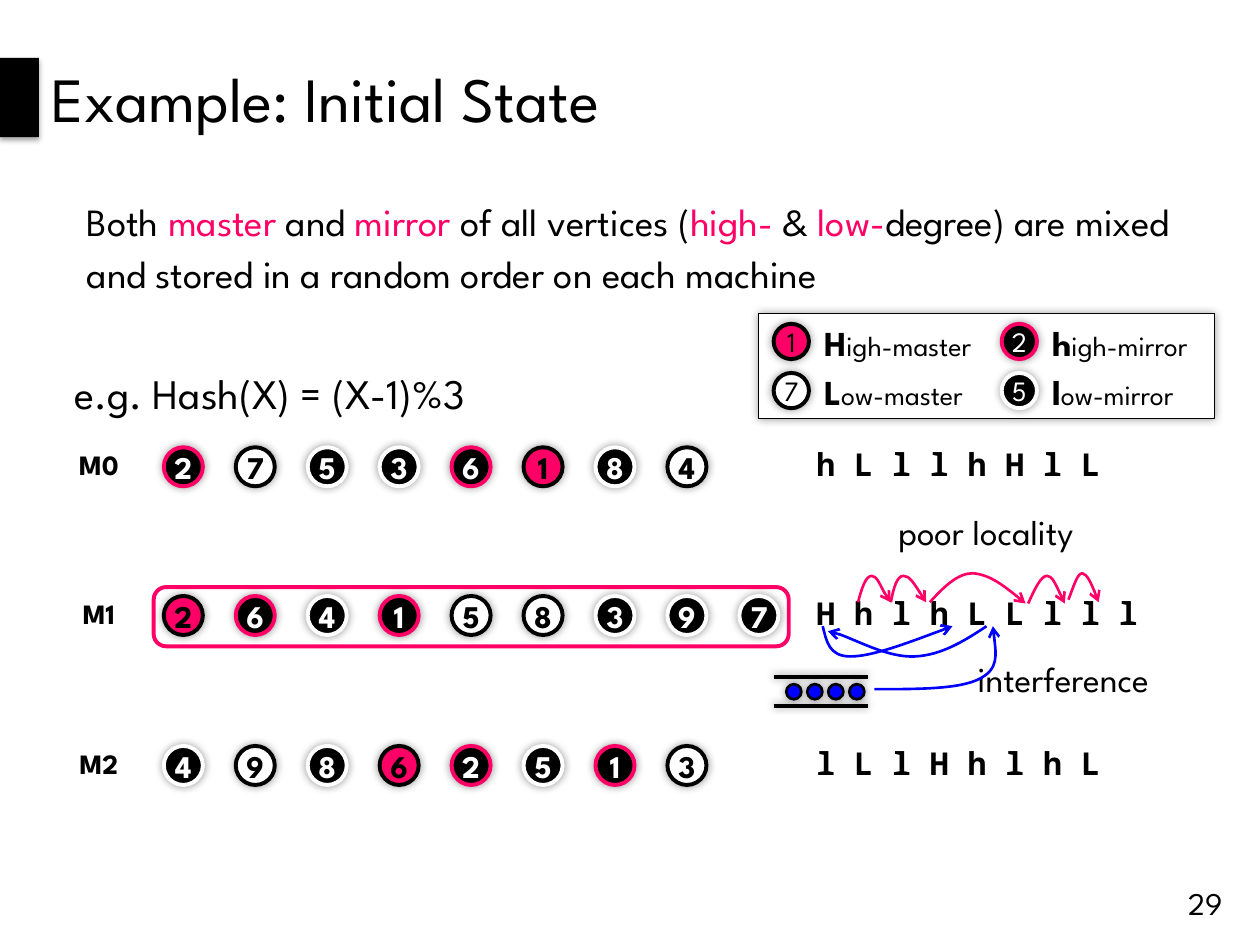
"""Build the slide showing the initial vertex order on three machines."""
from lxml import etree
from pptx import Presentation
from pptx.dml.color import RGBColor
from pptx.enum.shapes import MSO_CONNECTOR, MSO_SHAPE
from pptx.enum.text import MSO_ANCHOR, PP_ALIGN
from pptx.oxml.ns import qn
from pptx.util import Inches, Pt

OVAL, RECT, ROUND = MSO_SHAPE.OVAL, MSO_SHAPE.RECTANGLE, MSO_SHAPE.ROUNDED_RECTANGLE
LINE = MSO_CONNECTOR.STRAIGHT
TOP, MIDDLE = MSO_ANCHOR.TOP, MSO_ANCHOR.MIDDLE
LEFT, CENTER, RIGHT = PP_ALIGN.LEFT, PP_ALIGN.CENTER, PP_ALIGN.RIGHT
BLACK = RGBColor(0, 0, 0)
WHITE = RGBColor(255, 255, 255)
PINK = RGBColor(255, 0, 102)
BLUE = RGBColor(0, 0, 255)
SANS, MONO = "League Spartan", "Noto Sans Mono"

KINDS = {
    "H": (PINK, BLACK, BLACK),
    "h": (BLACK, PINK, WHITE),
    "L": (WHITE, BLACK, BLACK),
    "l": (BLACK, WHITE, WHITE),
}
ROWS = [
    ("M0", 3.55, "27536184", "hLllhHlL"),
    ("M1", 4.73, "264158397", "HhlhLLlll"),
    ("M2", 5.92, "49862513", "lLlHhlhL"),
]
LEGEND = [
    (6.14, 2.57, "1", "H", "igh-master", 1.38),
    (7.95, 2.57, "2", "h", "igh-mirror", 1.18),
    (6.14, 2.96, "7", "L", "ow-master", 1.38),
    (7.95, 2.96, "5", "l", "ow-mirror", 1.18),
]
CURVES = [
    (PINK, [(6.81, 4.78), (6.84, 4.67), (6.87, 4.57), (6.92, 4.57),
            (6.96, 4.57), (7.03, 4.74), (7.07, 4.78)]),
    (PINK, [(7.07, 4.78), (7.09, 4.67), (7.12, 4.57), (7.17, 4.57),
            (7.22, 4.57), (7.28, 4.67), (7.35, 4.78)]),
    (PINK, [(7.38, 4.78), (7.49, 4.66), (7.6, 4.55), (7.72, 4.55),
            (7.85, 4.56), (8, 4.67), (8.14, 4.79)]),
    (PINK, [(8.16, 4.79), (8.21, 4.68), (8.26, 4.57), (8.31, 4.57),
            (8.35, 4.57), (8.4, 4.68), (8.45, 4.79)]),
    (PINK, [(8.48, 4.76), (8.52, 4.66), (8.55, 4.55), (8.59, 4.55),
            (8.63, 4.56), (8.68, 4.67), (8.72, 4.78)]),
    (BLUE, [(6.94, 5.47), (7.28, 5.47), (7.61, 5.47), (7.77, 5.39),
            (7.93, 5.31), (7.9, 5.14), (7.88, 4.97)]),
    (BLUE, [(7.83, 4.97), (7.65, 5.09), (7.47, 5.2), (7.26, 5.21),
            (7.05, 5.22), (6.66, 5.01), (6.57, 5.01)]),
    (BLUE, [(6.53, 4.97), (6.56, 5.09), (6.58, 5.21), (6.75, 5.21),
            (6.92, 5.21), (7.24, 5.09), (7.56, 4.97)]),
]


def shade(shape, alpha=40, blur=5, dist=0):
    effects = etree.SubElement(shape._element.spPr, qn("a:effectLst"))
    if alpha:
        outer = etree.SubElement(
            effects, qn("a:outerShdw"), blurRad=str(Pt(blur)),
            dist=str(Pt(dist)), dir="5400000", rotWithShape="0")
        tint = etree.SubElement(outer, qn("a:srgbClr"), val="000000")
        etree.SubElement(tint, qn("a:alpha"), val=str(alpha * 1000))


def write(shape, runs, align=LEFT, space=1.0, pad=0, anchor=MIDDLE, font=SANS):
    frame = shape.text_frame
    frame.word_wrap = True
    frame.vertical_anchor = anchor
    frame.margin_left = frame.margin_right = Inches(pad)
    frame.margin_top = frame.margin_bottom = Inches(pad / 2)
    para = frame.paragraphs[0]
    para.alignment = align
    para.line_spacing = space
    for text, size, color, bold in runs:
        run = para.add_run()
        run.text = text
        run.font.name = font
        run.font.size = Pt(size)
        run.font.bold = bold
        run.font.color.rgb = color


deck = Presentation()
deck.slide_width, deck.slide_height = Inches(10), Inches(7.5)
slide = deck.slides.add_slide(deck.slide_layouts[6])
shapes = slide.shapes

bar = shapes.add_shape(RECT, 0, Inches(0.46), Inches(0.31), Inches(0.63))
bar.fill.solid()
bar.fill.fore_color.rgb = BLACK
bar.line.fill.background()
shade(bar, 35, 3.1, 1.8)

for form, x, y, wide, high, color, weight, alpha in [
    (ROUND, 1.22, 4.66, 5.04, 0.47, PINK, 2.25, 0),
    (RECT, 6.02, 2.49, 3.62, 0.83, BLACK, 0.25, 40),
]:
    box = shapes.add_shape(form, Inches(x), Inches(y), Inches(wide), Inches(high))
    if form == ROUND:
        box.adjustments[0] = 0.21
    box.fill.solid()
    box.fill.fore_color.rgb = WHITE
    box.line.color.rgb = color
    box.line.width = Pt(weight)
    shade(box, alpha)

disks = [(1.3 + 0.571 * step, y, 0.31, digit, kind, 18, True)
         for name, y, digits, kinds in ROWS
         for step, (digit, kind) in enumerate(zip(digits, kinds))]
disks += [(x, y, 0.28, digit, kind, 16, False)
          for x, y, digit, kind, rest, wide in LEGEND]
for x, y, side, digit, kind, size, bold in disks:
    fill, edge, ink = KINDS[kind]
    disk = shapes.add_shape(OVAL, Inches(x), Inches(y), Inches(side), Inches(side))
    disk.fill.solid()
    disk.fill.fore_color.rgb = fill
    disk.line.color.rgb = edge
    disk.line.width = Pt(2.25)
    shade(disk)
    write(disk, [(digit, size, ink, bold)], CENTER)

for name, y, digits, kinds in ROWS:
    label = shapes.add_textbox(Inches(0.51), Inches(y + 0.02), Inches(0.55), Inches(0.28))
    write(label, [(name, 16, BLACK, True)], CENTER, 0.8)
    order = shapes.add_textbox(Inches(6.48), Inches(y + 0.02), Inches(2.56), Inches(0.28))
    write(order, [(" ".join(kinds), 18, BLACK, True)], LEFT, 0.8, font=MONO)

for x, y, digit, kind, rest, wide in LEGEND:
    label = shapes.add_textbox(Inches(x + 0.4), Inches(y + 0.04), Inches(wide), Inches(0.28))
    write(label, [(kind, 20, BLACK, True), (rest, 16, BLACK, False)], LEFT, 0.8)

for text, size, x, y, wide, high in [
    ("e.g. Hash(X) = (X-1)%3", 24, 0.59, 2.88, 4.2, 0.55),
    ("poor locality", 20, 7.13, 4.08, 1.81, 0.34),
    ("interference", 20, 7.76, 5.25, 1.77, 0.34),
]:
    note = shapes.add_textbox(Inches(x), Inches(y), Inches(wide), Inches(high))
    write(note, [(text, size, BLACK, False)], LEFT, 0.8)

title = shapes.add_textbox(Inches(0.31), 0, Inches(9.69), Inches(1.55))
write(title, [("Example: Initial State", 36, BLACK, False)], pad=0.1)

body = shapes.add_textbox(Inches(0.59), Inches(1.47), Inches(8.98), Inches(1.37))
parts = [
    ("Both ", BLACK), ("master ", PINK), ("and ", BLACK), ("mirror ", PINK),
    ("of all vertices (", BLACK), ("high-", PINK), (" & ", BLACK), ("low-", PINK),
    ("degree) are mixed and stored in a random order on each machine", BLACK),
]
write(body, [(text, 22, color, False) for text, color in parts],
      LEFT, 1.14, 0.1, TOP)

page = shapes.add_textbox(Inches(9.33), Inches(6.97), Inches(0.47), Inches(0.4))
write(page, [("29", 18, BLACK, False)], RIGHT, pad=0.1)
page.text_frame.word_wrap = False

for step in range(4):
    dot = shapes.add_shape(OVAL, Inches(6.24 + step / 6), Inches(5.43),
                           Inches(0.12), Inches(0.12))
    dot.fill.solid()
    dot.fill.fore_color.rgb = BLUE
    dot.line.color.rgb = BLACK
    dot.line.width = Pt(1.5)
    shade(dot)
for y in (5.37, 5.6):
    rail = shapes.add_connector(LINE, Inches(6.14), Inches(y), Inches(6.89), Inches(y))
    rail.line.color.rgb = BLACK
    rail.line.width = Pt(2.25)
    shade(rail)

for color, points in CURVES:
    start, *others = [(Inches(x), Inches(y)) for x, y in points]
    pen = shapes.build_freeform(*start)
    pen.add_line_segments(others, close=False)
    curve = pen.convert_to_shape()
    curve.fill.background()
    curve.line.color.rgb = color
    curve.line.width = Pt(1.5)
    shade(curve, 0)
    props = curve._element.spPr
    etree.SubElement(props.find(qn("a:ln")), qn("a:tailEnd"), type="arrow")
    legs = list(props.iter(qn("a:lnTo")))
    for first in range(0, len(legs), 3):
        bend = etree.Element(qn("a:cubicBezTo"))
        legs[first].addprevious(bend)
        for leg in legs[first:first + 3]:
            bend.append(leg[0])
            leg.getparent().remove(leg)

deck.save("out.pptx")
